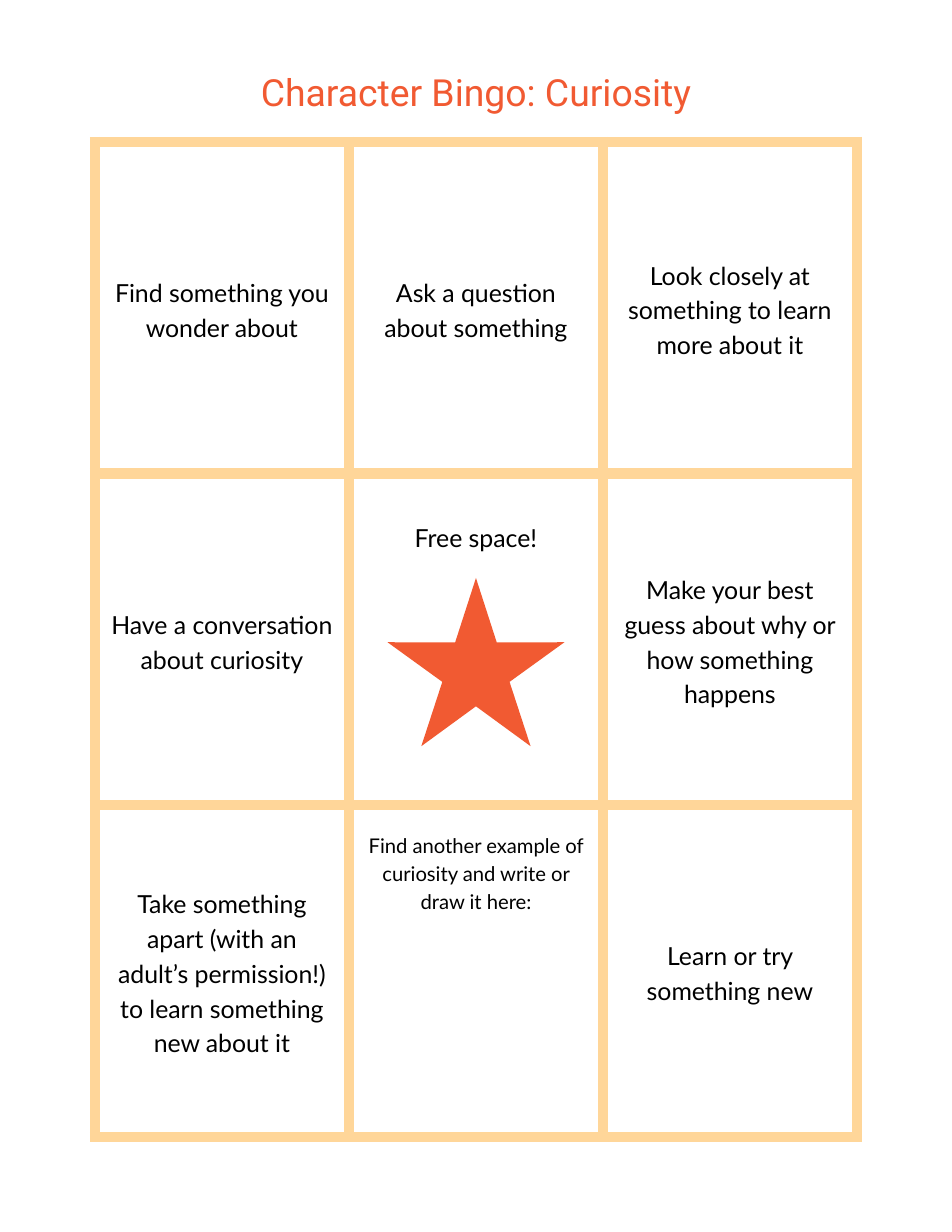
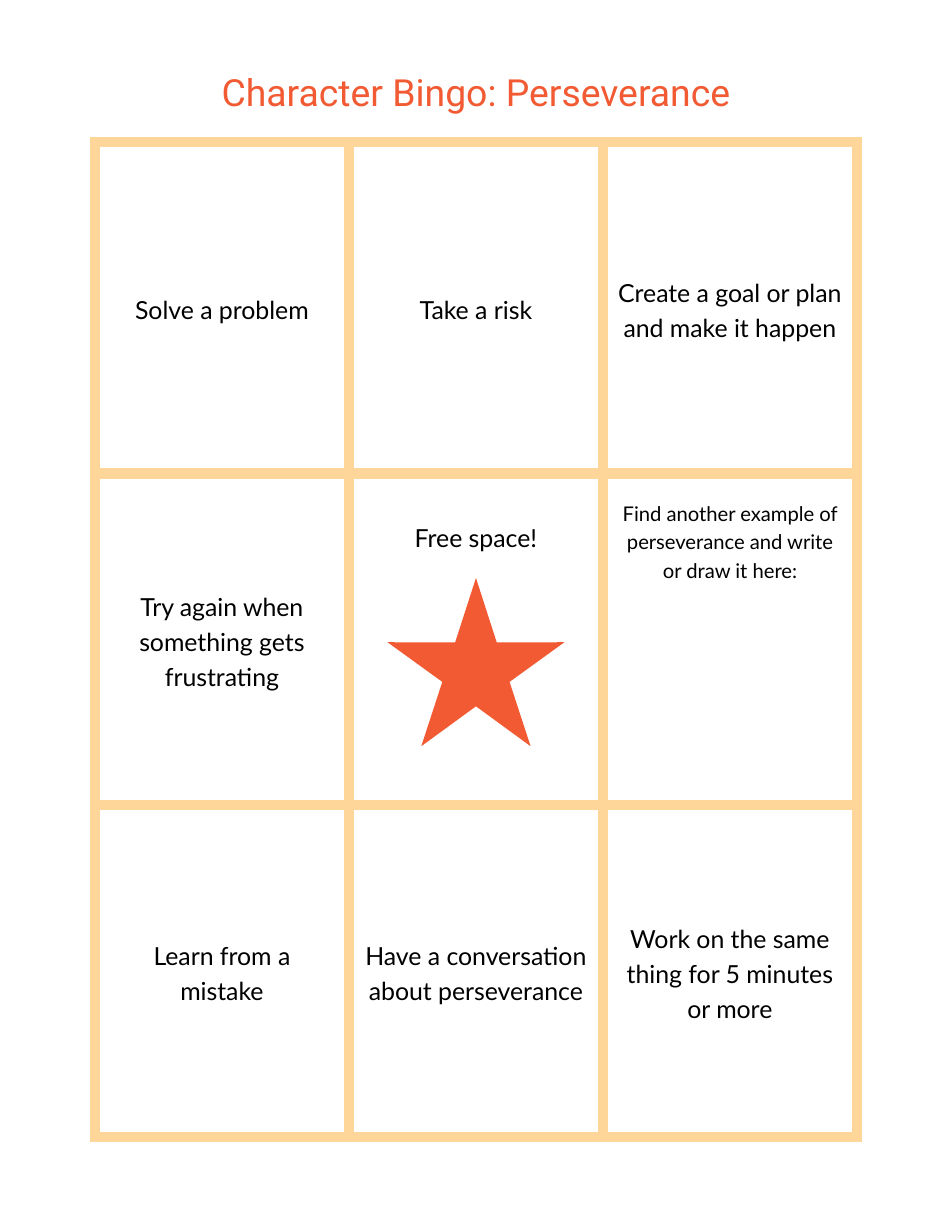
import math

import lxml.etree
import pptx
import pptx.dml.color
import pptx.enum.text
import pptx.oxml.ns
import pptx.util

FREE = ("Free space!", "free")

CARDS = [
    ("Curiosity", [
        ["Find something you wonder about", "Ask a question about something",
         "Look closely at something to learn more about it"],
        ["Have a conversation about curiosity", FREE,
         "Make your best guess about why or how something happens"],
        ["Take something apart (with an adult’s permission!) to learn something new about it",
         ("Find another example of curiosity and write or draw it here:", "example"),
         "Learn or try something new"],
    ]),
    ("Perseverance", [
        ["Solve a problem", "Take a risk", "Create a goal or plan and make it happen"],
        ["Try again when something gets frustrating", FREE,
         ("Find another example of perseverance and write or draw it here:", "example")],
        ["Learn from a mistake", "Have a conversation about perseverance",
         "Work on the same thing for 5 minutes or more"],
    ]),
]

ANCHOR = pptx.enum.text.MSO_ANCHOR


class Theme:
    accent, border, ink = "F15A32", "FFD699", "000000"
    border_points = 7.5
    line_ratio = 1.4
    title = {"name": "Roboto", "size": 24, "color": accent}
    # Per cell style: text size, vertical anchor, top margin in px
    cells = {
        "prompt": (16, ANCHOR.MIDDLE, 15),
        "free": (16, ANCHOR.TOP, 44),
        "example": (13, ANCHOR.TOP, 24),
    }


PX_PER_INCH = 112
SLIDE_SIZE = (952, 1232)
TITLE_BOX = (57, 62, 838, 52)
GRID_BOX = (95, 142, 762, 995)
CELL_MARGIN = 15
STAR_CENTER, STAR_RADIUS, STAR_INNER_RATIO = (476, 671), 93, 0.38


def px(length):
    return pptx.util.Emu(round(length * pptx.util.Inches(1) / PX_PER_INCH))


def set_all(target, values):
    for name, value in values.items():
        setattr(target, name, value)


def rgb(color):
    return pptx.dml.color.RGBColor.from_string(color)


def write(frame, text, name, size, color):
    """Put one centred line-spaced paragraph into a text frame."""
    paragraph = frame.paragraphs[0]
    run = paragraph.add_run()
    run.text = text
    set_all(paragraph, {
        "alignment": pptx.enum.text.PP_ALIGN.CENTER,
        "line_spacing": pptx.util.Pt(size * Theme.line_ratio),
        "space_before": pptx.util.Pt(0),
    })
    set_all(run.font, {"name": name, "size": pptx.util.Pt(size)})
    run.font.color.rgb = rgb(color)


def add_borders(cell):
    properties = cell._tc.get_or_add_tcPr()
    tag = pptx.oxml.ns.qn
    for side in ("a:lnL", "a:lnR", "a:lnT", "a:lnB"):
        line = lxml.etree.SubElement(properties, tag(side),
                                     w=str(pptx.util.Pt(Theme.border_points)))
        fill = lxml.etree.SubElement(line, tag("a:solidFill"))
        lxml.etree.SubElement(fill, tag("a:srgbClr"), val=Theme.border)


def add_title(slide, trait):
    title = slide.shapes.title
    set_all(title, dict(zip(("left", "top", "width", "height"), map(px, TITLE_BOX))))
    set_all(title.text_frame, {
        "margin_left": 0, "margin_right": 0, "margin_top": 0, "margin_bottom": 0,
        "word_wrap": True, "vertical_anchor": ANCHOR.TOP,
        "auto_size": pptx.enum.text.MSO_AUTO_SIZE.NONE,
    })
    write(title.text_frame, f"Character Bingo: {trait}", **Theme.title)


def add_grid(slide, rows):
    table = slide.shapes.add_table(len(rows), len(rows[0]), *map(px, GRID_BOX)).table
    set_all(table, {"first_row": False, "horz_banding": False})
    for row_index, row in enumerate(rows):
        for column_index, entry in enumerate(row):
            text, style = (entry, "prompt") if isinstance(entry, str) else entry
            size, anchor, top = Theme.cells[style]
            cell = table.cell(row_index, column_index)
            set_all(cell, {
                "margin_left": px(CELL_MARGIN), "margin_right": px(CELL_MARGIN),
                "margin_top": px(top), "margin_bottom": px(CELL_MARGIN),
                "vertical_anchor": anchor,
            })
            add_borders(cell)
            cell.fill.background()
            write(cell.text_frame, text, "Lato", size, Theme.ink)


def add_star(slide):
    points = []
    for step in range(10):
        radius = STAR_RADIUS * (STAR_INNER_RATIO if step % 2 else 1)
        angle = math.radians(36 * step)
        points.append((px(STAR_CENTER[0] + radius * math.sin(angle)),
                       px(STAR_CENTER[1] - radius * math.cos(angle))))
    builder = slide.shapes.build_freeform(*points[0])
    builder.add_line_segments(points[1:], close=True)
    star = builder.convert_to_shape()
    star.shadow.inherit = False
    star.fill.solid()
    star.fill.fore_color.rgb = rgb(Theme.accent)
    star.line.fill.background()


def main():
    presentation = pptx.Presentation()
    set_all(presentation, dict(zip(("slide_width", "slide_height"), map(px, SLIDE_SIZE))))
    title_only = presentation.slide_layouts.get_by_name("Title Only")
    for trait, rows in CARDS:
        slide = presentation.slides.add_slide(title_only)
        add_title(slide, trait)
        add_grid(slide, rows)
        add_star(slide)
    presentation.save("out.pptx")


if __name__ == "__main__":
    main()
